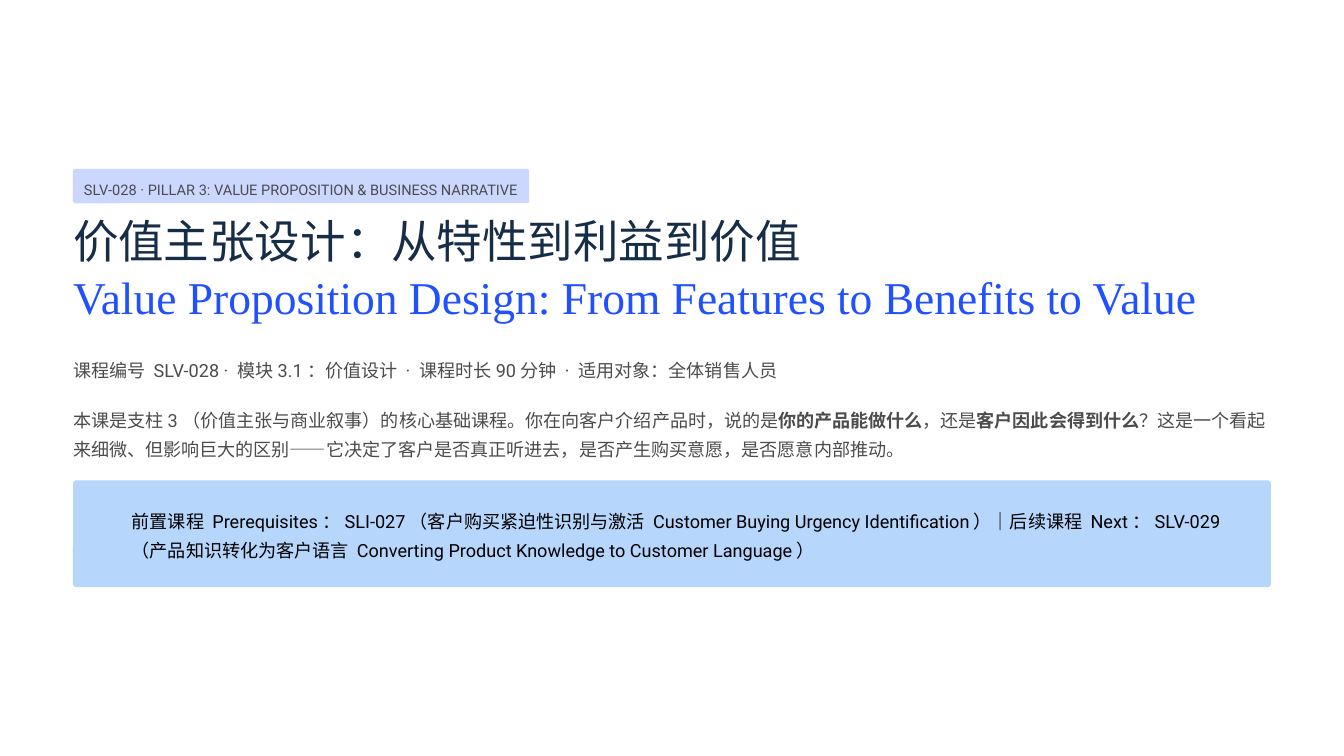
from pptx import Presentation
from pptx.dml.color import RGBColor
from pptx.enum.shapes import MSO_SHAPE
from pptx.enum.text import MSO_ANCHOR, MSO_AUTO_SIZE, PP_ALIGN
from pptx.util import Pt

ROUNDED = MSO_SHAPE.ROUNDED_RECTANGLE
TOP = MSO_ANCHOR.TOP
NO_FIT = MSO_AUTO_SIZE.NONE
LEFT = PP_ALIGN.LEFT

COLORS = {
    "page": "FFFFFF", "tag": "CCD7FF", "callout": "B6D6FC",
    "navy": "152D47", "blue": "2150FE", "grey": "4C4C4D", "black": "000000",
}
TAG = {"size": 12.5, "name": "Roboto", "color": "grey", "spacing": 20}
BODY = {"size": 15.5, "name": "Roboto", "color": "grey", "spacing": 25}
CALLOUT = {**BODY, "color": "black"}
TITLE = {"size": 39, "name": "Times New Roman", "color": "navy", "spacing": 48.5}
SUBTITLE = {**TITLE, "color": "blue"}

MARGIN = 62.6
CONTENT_W = 1026.8

INTRO = [
    ("本课是支柱3（价值主张与商业叙事）的核心基础课程。你在向客户介绍产品时，说的是", False),
    ("你的产品能做什么", True),
    ("，还是", False),
    ("客户因此会得到什么", True),
    ("？这是一个看起来细微、但影响巨大的区别——它决定了客户是否真正听进去，"
     "是否产生购买意愿，是否愿意内部推动。", False),
]
PREREQUISITES = (
    "前置课程 Prerequisites：SLI-027（客户购买紧迫性识别与激活 "
    "Customer Buying Urgency Identification）｜后续课程 Next：SLV-029"
    "（产品知识转化为客户语言 Converting Product Knowledge to Customer Language）"
)


def rgb(name):
    """Return the named colour."""
    return RGBColor.from_string(COLORS[name])


def place(sp, box):
    """Move and size a shape, in points."""
    for attr, value in zip(("left", "top", "width", "height"), box):
        setattr(sp, attr, Pt(value))


def fill_text(tf, paragraphs, wrap=True):
    """Write (runs, style) paragraphs into a frame without insets."""
    frame = {"margin_left": 0, "margin_top": 0, "margin_right": 0, "margin_bottom": 0,
             "auto_size": NO_FIT, "word_wrap": wrap, "vertical_anchor": TOP}
    for attr, value in frame.items():
        setattr(tf, attr, value)
    for i, (runs, style) in enumerate(paragraphs):
        p = tf.add_paragraph() if i else tf.paragraphs[0]
        layout = {"alignment": LEFT, "line_spacing": Pt(style["spacing"]),
                  "space_before": Pt(0), "space_after": Pt(0)}
        for attr, value in layout.items():
            setattr(p, attr, value)
        for text, bold in runs:
            r = p.add_run()
            r.text = text
            font = {"size": Pt(style["size"]), "name": style["name"], "bold": bold}
            for attr, value in font.items():
                setattr(r.font, attr, value)
            r.font.color.rgb = rgb(style["color"])


def add_panel(s, box, color, radius):
    """Add a filled panel with slightly rounded corners."""
    sp = s.shapes.add_shape(ROUNDED, *map(Pt, box))
    sp.shadow.inherit = False
    sp.adjustments[0] = radius
    sp.fill.solid()
    sp.fill.fore_color.rgb = rgb(color)
    sp.line.fill.background()


def add_text(s, box, runs, style, wrap=True):
    """Add a one-paragraph text box."""
    sp = s.shapes.add_textbox(*map(Pt, box))
    fill_text(sp.text_frame, [(runs, style)], wrap)


def add_title(s, box, lines):
    """Fill the title placeholder with one paragraph per line."""
    sp = s.shapes.title
    place(sp, box)
    fill_text(sp.text_frame, [([(text, False)], style) for text, style in lines])


def main():
    """Build the course cover slide."""
    prs = Presentation()
    prs.slide_width, prs.slide_height = Pt(1152), Pt(648)
    s = prs.slides.add_slide(prs.slide_layouts[5])
    s.background.fill.solid()
    s.background.fill.fore_color.rgb = rgb("page")

    add_panel(s, (MARGIN, 144.7, 391, 29.5), "tag", 0.06)
    add_text(s, (72, 149.8, 371.5, 20),
             [("SLV-028 · PILLAR 3: VALUE PROPOSITION & BUSINESS NARRATIVE", False)],
             TAG, wrap=False)
    add_title(s, (MARGIN, 180.7, 973.4, 98),
              [("价值主张设计：从特性到利益到价值", TITLE),
               ("Value Proposition Design: From Features to Benefits to Value", SUBTITLE)])
    add_text(s, (MARGIN, 301.7, CONTENT_W, 25),
             [("课程编号 SLV-028 · 模块3.1：价值设计 · 课程时长90分钟 · 适用对象：全体销售人员", False)],
             BODY, wrap=False)
    add_text(s, (MARGIN, 344.2, CONTENT_W, 50), INTRO, BODY)
    add_panel(s, (MARGIN, 411.8, CONTENT_W, 91.4), "callout", 0.03)
    add_text(s, (113, 431.3, 960.5, 50), [(PREREQUISITES, False)], CALLOUT)

    prs.save("out.pptx")


if __name__ == "__main__":
    main()
